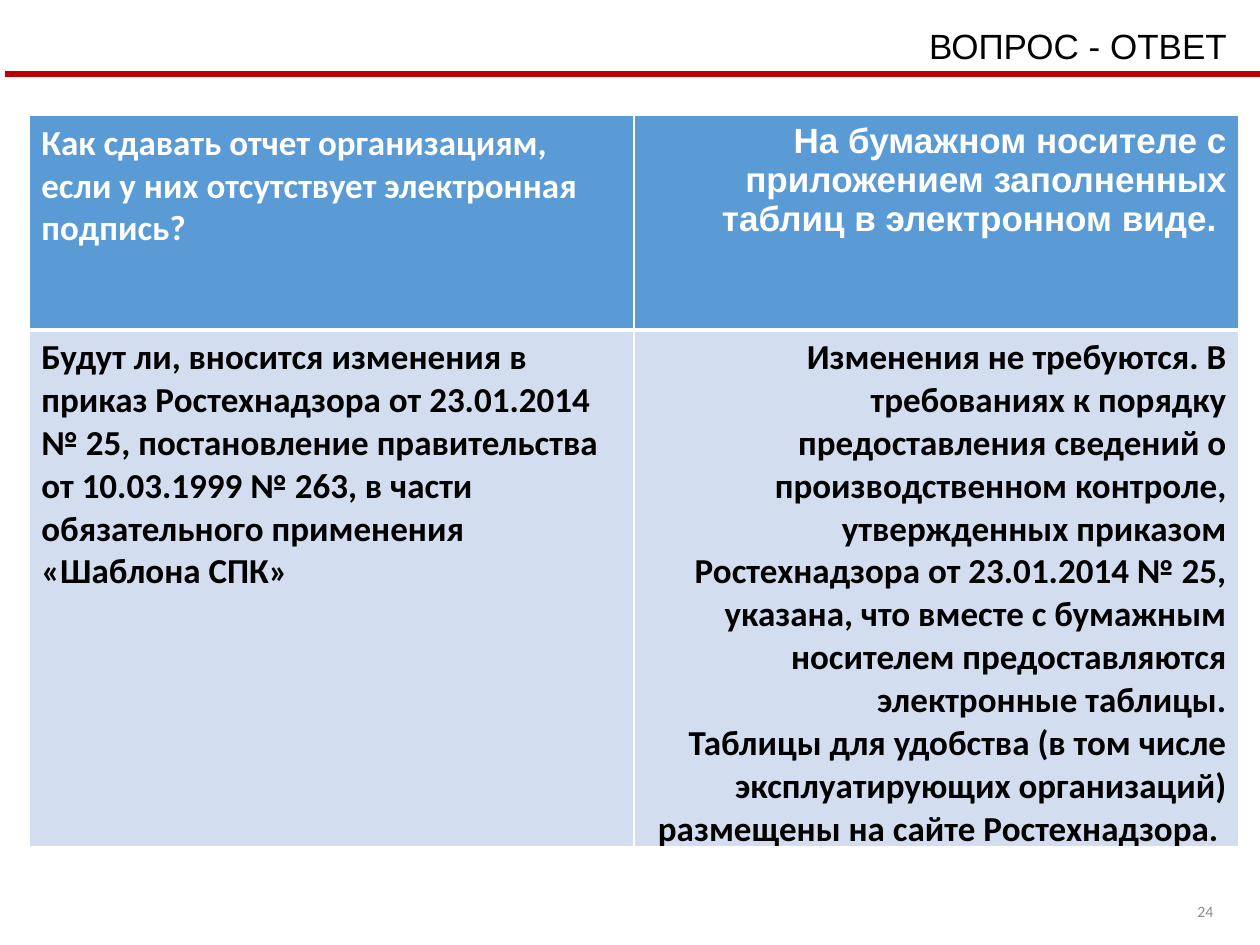
from dataclasses import dataclass

from lxml import etree
from pptx import Presentation
from pptx import util as u
from pptx.dml.color import RGBColor
from pptx.enum import shapes, text
from pptx.oxml import ns


@dataclass(frozen=True)
class Theme:
    ink: str = "000000"
    paper: str = "FFFFFF"
    rule: str = "C00000"
    header: str = "5B9BD5"
    body: str = "D2DEEF"
    muted: str = "8C8C8C"
    main_size: int = 20
    number_size: int = 9
    heading_font: str = "Arial"
    body_font: str = "Calibri"


THEME = Theme()
LEFT, RIGHT = text.PP_ALIGN.LEFT, text.PP_ALIGN.RIGHT
QUESTIONS = [
    ["Как сдавать отчет организациям, если у них отсутствует электронная подпись?",
     "На бумажном носителе с приложением заполненных таблиц в электронном виде. "],
    ["Будут ли, вносится изменения в приказ Ростехнадзора от 23.01.2014 № 25, "
     "постановление правительства от 10.03.1999 № 263, в части обязательного "
     "применения «Шаблона СПК»",
     "Изменения не требуются. В требованиях к порядку предоставления сведений о "
     "производственном контроле, утвержденных приказом Ростехнадзора от 23.01.2014 "
     "№ 25, указана, что вместе с бумажным носителем предоставляются электронные "
     "таблицы.\n"
     "Таблицы для удобства (в том числе эксплуатирующих организаций) размещены на "
     "сайте Ростехнадзора. "],
]


def set_values(target, values):
    for name, value in values.items():
        setattr(target, name, value)


def write(frame, content, align, color, **font):
    frame.text = content
    frame.word_wrap = True
    for para in frame.paragraphs:
        set_values(para, {"alignment": align, "line_spacing": 1.0,
                          "space_before": u.Pt(0)})
        for span in para.runs:
            set_values(span.font, font)
            span.font.color.rgb = RGBColor.from_string(color)


def add_title(page, content):
    title = page.shapes.title
    set_values(title, {"left": u.Cm(0.58), "top": u.Cm(0.36),
                       "width": u.Cm(24.41), "height": u.Cm(1.11)})
    set_values(title.text_frame, {"vertical_anchor": text.MSO_ANCHOR.TOP,
                                  "auto_size": text.MSO_AUTO_SIZE.NONE})
    write(title.text_frame, content, RIGHT, THEME.ink,
          name=THEME.heading_font, size=u.Pt(THEME.main_size))


def add_rule(page):
    rule = page.shapes.add_connector(shapes.MSO_CONNECTOR.STRAIGHT,
                                     u.Cm(0.1), u.Cm(1.49), u.Cm(25.5), u.Cm(1.49))
    rule.line.color.rgb = RGBColor.from_string(THEME.rule)
    rule.line.width = u.Pt(3)
    etree.SubElement(rule._element.spPr, ns.qn("a:effectLst"))


def add_borders(cell, widths):
    props = cell._tc.get_or_add_tcPr()
    for index, (side, points) in enumerate(widths.items()):
        line = etree.Element(ns.qn(f"a:ln{side}"), w=str(u.Pt(points)))
        fill = etree.SubElement(line, ns.qn("a:solidFill"))
        etree.SubElement(fill, ns.qn("a:srgbClr"), val=THEME.paper)
        props.insert(index, line)


def fill_cell(cell, content, is_header, is_answer):
    cell.fill.solid()
    cell.fill.fore_color.rgb = RGBColor.from_string(
        THEME.header if is_header else THEME.body)
    cell.margin_bottom = 0
    font = THEME.heading_font if is_header and is_answer else THEME.body_font
    write(cell.text_frame, content, RIGHT if is_answer else LEFT,
          THEME.paper if is_header else THEME.ink,
          name=font, size=u.Pt(THEME.main_size), bold=True)
    edge = 3 if is_header else 1
    add_borders(cell, {"L": 1, "R": 1, "T": 1 if is_header else 3, "B": edge})


def add_questions(page, rows):
    table = page.shapes.add_table(len(rows), 2, u.Cm(0.58), u.Cm(2.33),
                                  u.Cm(24.4), u.Cm(14.73)).table
    for row, height in zip(table.rows, (4.32, 10.41)):
        row.height = u.Cm(height)
    for row_index, row in enumerate(rows):
        for column_index, content in enumerate(row):
            fill_cell(table.cell(row_index, column_index), content,
                      row_index == 0, column_index == 1)


def add_page_number(page, number):
    box = page.shapes.add_textbox(u.Cm(22.58), u.Cm(17.98), u.Cm(2.13), u.Cm(0.76))
    box.text_frame.vertical_anchor = text.MSO_ANCHOR.MIDDLE
    write(box.text_frame, number, RIGHT, THEME.muted,
          name=THEME.body_font, size=u.Pt(THEME.number_size))


def main():
    deck = Presentation()
    set_values(deck, {"slide_width": u.Cm(25.4), "slide_height": u.Cm(19.05)})
    page = deck.slides.add_slide(deck.slide_layouts.get_by_name("Title Only"))
    add_page_number(page, "24")
    add_rule(page)
    add_title(page, "ВОПРОС - ОТВЕТ")
    add_questions(page, QUESTIONS)
    deck.save("out.pptx")


if __name__ == "__main__":
    main()
